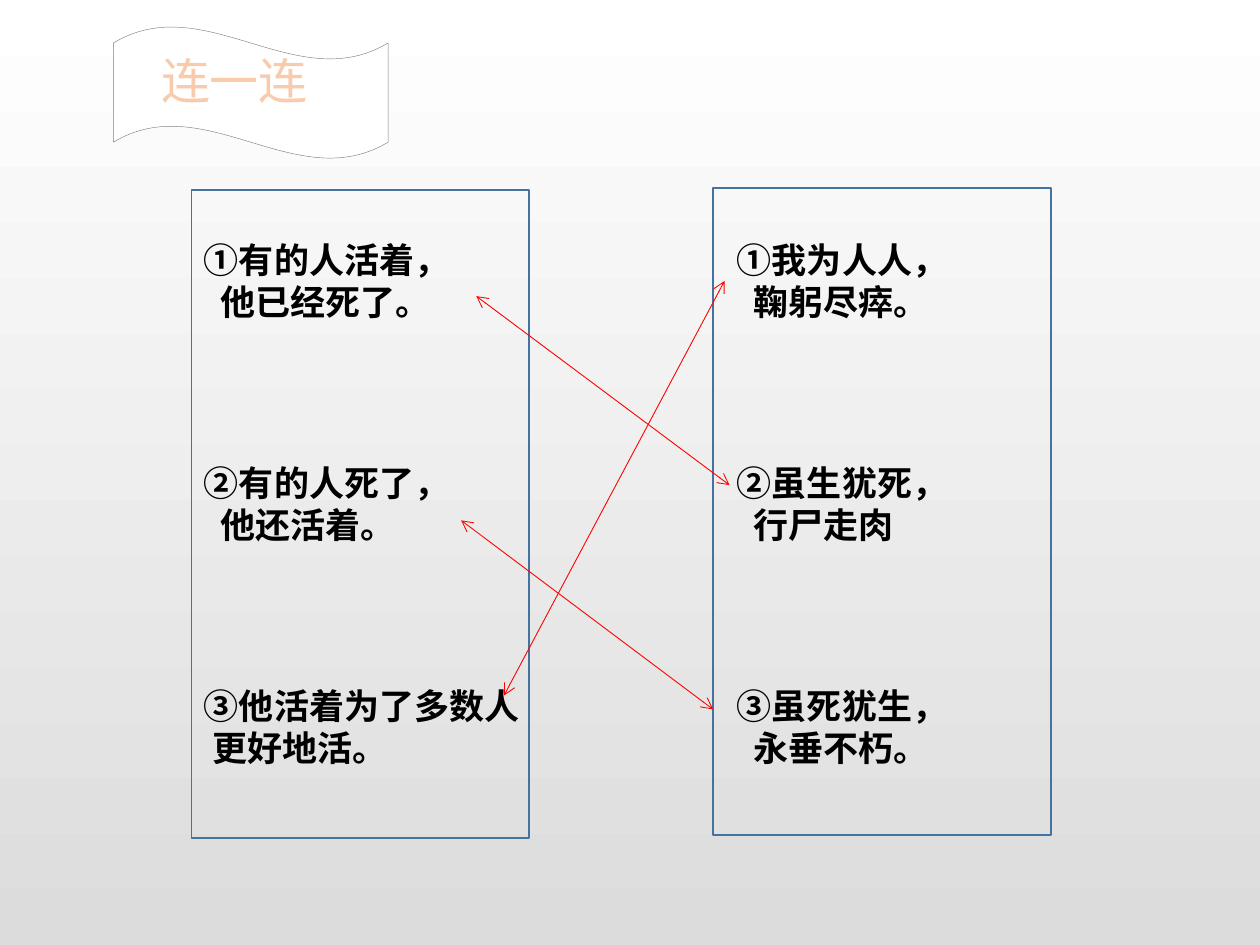
from lxml import etree
from pptx import Presentation
from pptx.dml.color import RGBColor
from pptx.enum.shapes import MSO_CONNECTOR, MSO_SHAPE
from pptx.enum.text import MSO_AUTO_SIZE
from pptx.oxml.ns import qn
from pptx.util import Inches, Pt

RECT, WAVE = MSO_SHAPE.RECTANGLE, MSO_SHAPE.WAVE
STRAIGHT = MSO_CONNECTOR.STRAIGHT
GROW = MSO_AUTO_SIZE.SHAPE_TO_FIT_TEXT

WHITE = RGBColor(0xFF, 0xFF, 0xFF)
SILVER = RGBColor(0xDC, 0xDC, 0xDC)
GRAY = RGBColor(0x80, 0x80, 0x80)
BLACK = RGBColor(0, 0, 0)
BLUE = RGBColor(0x43, 0x73, 0x9E)
RED = RGBColor(0xFF, 0, 0)
PEACH = RGBColor(0xF8, 0xCB, 0xAD)
ORANGE = RGBColor(0xED, 0x7D, 0x31)

CJK, LATIN = "Noto Sans CJK SC", "Arial"

# Each item: first line, second line, indent of the second line
LEFT_ITEMS = [
    ("①有的人活着，", "他已经死了。", 0.13),
    ("②有的人死了，", "他还活着。", 0.13),
    ("③他活着为了多数人", "更好地活。", 0.07),
]
RIGHT_ITEMS = [
    ("①我为人人，", "鞠躬尽瘁。", 0.13),
    ("②虽生犹死，", "行尸走肉", 0.13),
    ("③虽死犹生，", "永垂不朽。", 0.13),
]
ITEM_TOP, ITEM_STEP = 1.84, 1.77

# Matching arrows: start x, y, end x, y
MATCHES = [
    (3.78, 2.35, 5.79, 3.85),
    (3.66, 4.13, 5.66, 5.63),
    (4, 5.52, 5.75, 2.23),
]


def set_background(slide):
    fill = slide.background.fill
    fill.gradient()
    fill.gradient_angle = 270
    for stop, color in zip(fill.gradient_stops, (WHITE, SILVER)):
        stop.color.rgb = color


def add_outline(slide, kind, x, y, w, h, color, width, fill=None):
    sp = slide.shapes.add_shape(kind, Inches(x), Inches(y), Inches(w), Inches(h))
    sp.shadow.inherit = False
    if fill is None:
        sp.fill.background()
    else:
        sp.fill.solid()
        sp.fill.fore_color.rgb = fill
    sp.line.color.rgb = color
    sp.line.width = Pt(width)


def add_text_box(slide, x, y, w, h):
    tf = slide.shapes.add_textbox(Inches(x), Inches(y), Inches(w), Inches(h)).text_frame
    tf.word_wrap = True
    tf.auto_size = GROW
    return tf


def add_run(p, text, size, font, color, bold=False):
    r = p.add_run()
    r.text = text
    r.font.size = Pt(size)
    r.font.bold = bold
    r.font.name = font
    r.font.color.rgb = color
    rPr = r.font._element
    etree.SubElement(rPr, qn("a:ea")).set("typeface", CJK)
    return rPr


def add_title(slide):
    tf = add_text_box(slide, 1.18, 0.35, 2.78, 0.57)
    rPr = add_run(tf.paragraphs[0], "连一连", 28, LATIN, PEACH)
    # Text outline
    ln = etree.Element(qn("a:ln"), w=str(Pt(1.75)))
    solid = etree.SubElement(ln, qn("a:solidFill"))
    etree.SubElement(solid, qn("a:srgbClr"), val=str(ORANGE))
    rPr.insert(0, ln)


def add_items(slide, x, items):
    for i, (first, second, indent) in enumerate(items):
        tf = add_text_box(slide, x, ITEM_TOP + i * ITEM_STEP, 2.78, 0.77)
        add_run(tf.paragraphs[0], first, 20, CJK, BLACK, True)
        p = tf.add_paragraph()
        p._p.get_or_add_pPr().set("marL", str(Inches(indent)))
        add_run(p, second, 20, CJK, BLACK, True)


def add_double_arrow(slide, x1, y1, x2, y2):
    line = slide.shapes.add_connector(
        STRAIGHT, Inches(x1), Inches(y1), Inches(x2), Inches(y2))
    line.line.color.rgb = RED
    line.line.width = Pt(0.5)
    ln = line.line._get_or_add_ln()
    for end in ("a:headEnd", "a:tailEnd"):
        etree.SubElement(ln, qn(end), type="arrow")
    etree.SubElement(line._element.spPr, qn("a:effectLst"))


def main():
    prs = Presentation()
    prs.slide_width, prs.slide_height = Inches(10), Inches(7.5)
    slide = prs.slides.add_slide(prs.slide_layouts[6])
    set_background(slide)

    # Two columns to match
    add_outline(slide, RECT, 1.52, 1.51, 2.68, 5.14, BLUE, 1)
    add_outline(slide, RECT, 5.66, 1.49, 2.68, 5.14, BLUE, 1)
    add_items(slide, 1.52, LEFT_ITEMS)
    add_items(slide, 5.75, RIGHT_ITEMS)

    # Title banner
    add_outline(slide, WAVE, 0.9, 0.21, 2.18, 1.05, GRAY, 0.25, WHITE)
    add_title(slide)

    # Answers
    for match in MATCHES:
        add_double_arrow(slide, *match)

    prs.save("out.pptx")


if __name__ == "__main__":
    main()
